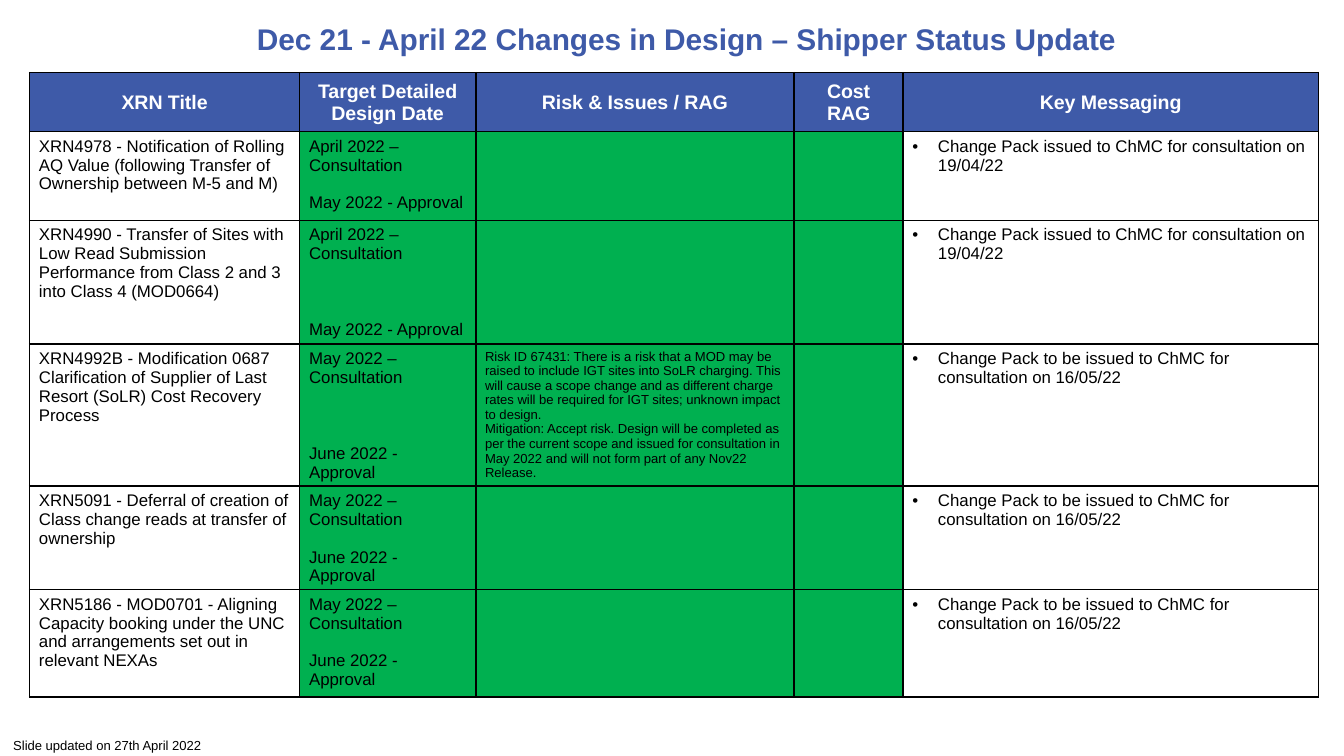
from dataclasses import dataclass

from lxml.etree import SubElement
from pptx import Presentation
from pptx.dml.color import RGBColor
from pptx.enum.text import MSO_ANCHOR, PP_ALIGN
from pptx.oxml.ns import qn
from pptx.util import Inches, Pt

FONT = "Arial"
BLUE, GREEN, WHITE, BLACK = "3E5AA8", "00B050", "FFFFFF", "000000"
PAGE_WIDTH = 10
PAGE_HEIGHT = PAGE_WIDTH * 9 / 16
HEADINGS = ["XRN Title", "Target Detailed Design Date", "Risk & Issues / RAG",
            "Cost RAG", "Key Messaging"]
COLUMN_WIDTHS = [2.01, 1.31, 2.37, 0.81, 3.09]
HEADER_HEIGHT = 0.44
LINE_GAP = 10.2  # points, one line of body text


@dataclass
class Change:
    title: str
    consultation: str
    approval: str
    message: str
    height: float
    gap_lines: int = 1
    risks: tuple[str, ...] = ()


ISSUED = "Change Pack issued to ChMC for consultation on 19/04/22"
TO_ISSUE = "Change Pack to be issued to ChMC for consultation on 16/05/22"
CHANGES = [
    Change("XRN4978 - Notification of Rolling AQ Value (following Transfer of "
           "Ownership between M-5 and M)", "April 2022", "May 2022", ISSUED, 0.66),
    Change("XRN4990 - Transfer of Sites with Low Read Submission Performance from "
           "Class 2 and 3 into Class 4 (MOD0664)",
           "April 2022", "May 2022", ISSUED, 0.92, 3),
    Change("XRN4992B - Modification 0687 Clarification of Supplier of Last Resort "
           "(SoLR) Cost Recovery Process", "May 2022", "June 2022", TO_ISSUE, 1.05, 3,
           ("Risk ID 67431: There is a risk that a MOD may be raised to include IGT "
            "sites into SoLR charging. This will cause a scope change and as different "
            "charge rates will be required for IGT sites; unknown impact to design.",
            "Mitigation: Accept risk. Design will be completed as per the current "
            "scope and issued for consultation in May 2022 and will not form part of "
            "any Nov22 Release.")),
    Change("XRN5091 - Deferral of creation of Class change reads at transfer of "
           "ownership", "May 2022", "June 2022", TO_ISSUE, 0.77),
    Change("XRN5186 - MOD0701 - Aligning Capacity booking under the UNC and "
           "arrangements set out in relevant NEXAs",
           "May 2022", "June 2022", TO_ISSUE, 0.8),
]


def color(value: str) -> RGBColor:
    return RGBColor.from_string(value)


def write(frame, lines, size: float, ink: str = BLACK, bold: bool = False,
          align=PP_ALIGN.LEFT, gap: float = 0, bullet: bool = False) -> None:
    """Fill a text frame, one paragraph a line, with a gap between them."""
    for index, line in enumerate(lines):
        para = frame.add_paragraph() if index else frame.paragraphs[0]
        para.text = line
        para.alignment = align
        if index and gap:
            para.space_before = Pt(gap)
        if bullet:
            properties = para._p.get_or_add_pPr()
            properties.set("marL", str(Inches(0.19)))
            properties.set("indent", str(-Inches(0.19)))
            SubElement(properties, qn("a:buFont"), typeface=FONT)
            SubElement(properties, qn("a:buChar"), char="•")
        para.font.name = FONT
        para.font.size = Pt(size)
        para.font.bold = bold
        para.font.color.rgb = color(ink)


def style_cell(cell, fill: str | None = None) -> None:
    """Set margins, thin black borders and the fill of one cell."""
    cell.margin_left = cell.margin_right = Inches(0.07)
    cell.margin_top = Inches(0.04)
    cell.margin_bottom = Inches(0.03)
    properties = cell._tc.get_or_add_tcPr()
    for side in ("lnL", "lnR", "lnT", "lnB"):
        border = SubElement(properties, qn(f"a:{side}"), w=str(Pt(1)))
        paint = SubElement(border, qn("a:solidFill"))
        SubElement(paint, qn("a:srgbClr"), val=BLACK)
    if fill:
        cell.fill.solid()
        cell.fill.fore_color.rgb = color(fill)
    else:
        cell.fill.background()


def add_status_table(page) -> None:
    heights = [HEADER_HEIGHT] + [change.height for change in CHANGES]
    table = page.shapes.add_table(
        len(heights), len(COLUMN_WIDTHS), Inches(0.22), Inches(0.54),
        Inches(sum(COLUMN_WIDTHS)), Inches(sum(heights))).table
    for column, width in zip(table.columns, COLUMN_WIDTHS):
        column.width = Inches(width)
    for row, height in zip(table.rows, heights):
        row.height = Inches(height)

    # Header row
    for cell, heading in zip(table.rows[0].cells, HEADINGS):
        style_cell(cell, BLUE)
        cell.vertical_anchor = MSO_ANCHOR.MIDDLE
        write(cell.text_frame, [heading], 10.5, WHITE, True, PP_ALIGN.CENTER)

    # One row per change, with the three status columns in green
    for number, change in enumerate(CHANGES, start=1):
        cells = list(table.rows[number].cells)
        for cell, fill in zip(cells, (None, GREEN, GREEN, GREEN, None)):
            style_cell(cell, fill)
        title, dates, risk, _, message = (cell.text_frame for cell in cells)
        write(title, [change.title], 9)
        write(dates, [f"{change.consultation} – Consultation",
                      f"{change.approval} - Approval"],
              9, gap=change.gap_lines * LINE_GAP)
        write(risk, change.risks, 7)
        write(message, [change.message], 9, bullet=True)


def add_box(page, left: float, top: float, width: float, height: float):
    return page.shapes.add_textbox(
        Inches(left), Inches(top), Inches(width), Inches(height)).text_frame


def main() -> None:
    deck = Presentation()
    deck.slide_width, deck.slide_height = Inches(PAGE_WIDTH), Inches(PAGE_HEIGHT)
    page = deck.slides.add_slide(deck.slide_layouts[6])
    add_status_table(page)

    # Title
    title = add_box(page, 0.61, -0.06, 9, 0.7)
    title.word_wrap = True
    title.vertical_anchor = MSO_ANCHOR.MIDDLE
    write(title, ["Dec 21 - April 22 Changes in Design – Shipper Status Update"],
          16, BLUE, True, PP_ALIGN.CENTER)

    # Footer note
    footer = add_box(page, 0, 5.44, 1.62, 0.22)
    footer.word_wrap = False
    write(footer, ["Slide updated on 27th April 2022"], 7)
    deck.save("out.pptx")


if __name__ == "__main__":
    main()
